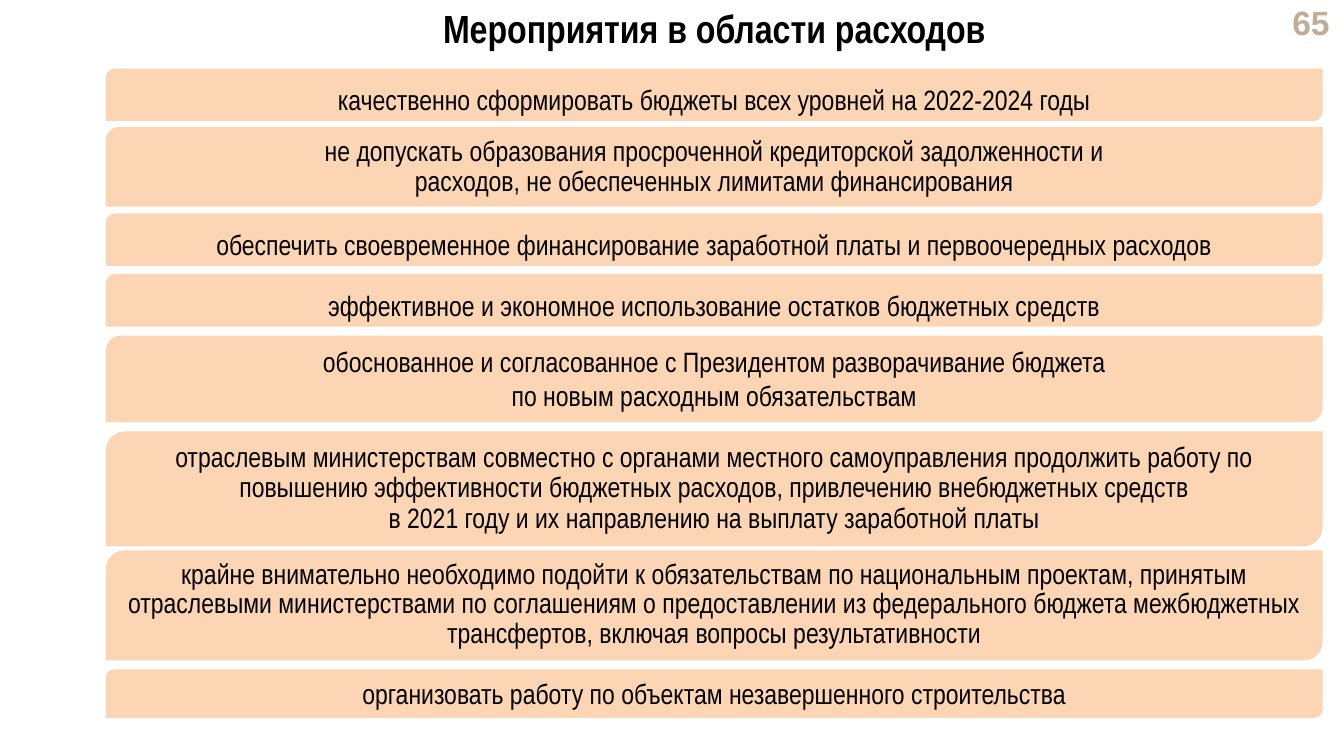
from pptx import Presentation
from pptx.dml.color import RGBColor as RGB
from pptx.enum.shapes import MSO_SHAPE as Shape
from pptx.enum.text import MSO_ANCHOR as Anchor, MSO_AUTO_SIZE as AutoSize, PP_ALIGN as Align
from pptx.util import Cm, Pt

TITLE = "Мероприятия в области расходов"
PAGE = "65"
MEASURES = [
    (1.73, 1.32, 1.2, "качественно сформировать бюджеты всех уровней на 2022-2024 годы"),
    (3.2, 2.01, Pt(22), "не допускать образования просроченной кредиторской задолженности и\v"
                        "расходов, не обеспеченных лимитами финансирования"),
    (5.38, 1.32, 1.2, "обеспечить своевременное финансирование заработной платы и первоочередных расходов"),
    (6.91, 1.32, 1.2, "эффективное и экономное использование остатков бюджетных средств"),
    (8.46, 2.18, None, "обоснованное и согласованное с Президентом разворачивание бюджета\v"
                       "по новым расходным обязательствам"),
    (10.87, 2.9, Pt(22), "отраслевым министерствам совместно с органами местного самоуправления "
                         "продолжить работу по повышению эффективности бюджетных расходов, "
                         "привлечению внебюджетных средств\v"
                         "в 2021 году и их направлению на выплату заработной платы"),
    (13.87, 2.77, Pt(21), "крайне внимательно необходимо подойти к обязательствам по национальным "
                          "проектам, принятым отраслевыми министерствами по соглашениям о "
                          "предоставлении из федерального бюджета межбюджетных трансфертов, "
                          "включая вопросы результативности"),
    (16.87, 1.22, None, "организовать работу по объектам незавершенного строительства"),
]
THEME = {
    "text": RGB(0, 0, 0), "page": RGB(0xBF, 0xAE, 0x96), "bar": RGB(0xFC, 0xD5, 0xB5),
    "font": "Arial Narrow", "page_font": "Arial",
    "title_size": Pt(28), "page_size": Pt(24), "body_size": Pt(20),
}
LEFT, WIDTH = Cm(2.67), Cm(30.66)


def write(sp, text, size, align=Align.CENTER, font="font", color="text", bold=False,
          spacing=None, anchor=Anchor.TOP):
    tf = sp.text_frame
    tf.word_wrap = True
    tf.vertical_anchor = anchor
    p = tf.paragraphs[0]
    p.text = text
    p.alignment = align
    if spacing:
        p.line_spacing = spacing
    p.font.name = THEME[font]
    p.font.size = THEME[size]
    p.font.bold = bold
    p.font.color.rgb = THEME[color]
    return tf


def add_bar(s, top, height, spacing, text):
    sp = s.shapes.add_shape(Shape.ROUND_2_DIAG_RECTANGLE, LEFT, Cm(top), WIDTH, Cm(height))
    sp.shadow.inherit = False
    sp.fill.solid()
    sp.fill.fore_color.rgb = THEME["bar"]
    sp.line.fill.background()
    tf = write(sp, text, "body_size", spacing=spacing)
    tf.auto_size = AutoSize.SHAPE_TO_FIT_TEXT
    tf.paragraphs[0].space_after = Pt(6)


def main():
    prs = Presentation()
    prs.slide_width, prs.slide_height = Cm(33.87), Cm(19.05)
    s = prs.slides.add_slide(prs.slide_layouts[6])
    page = s.shapes.add_textbox(Cm(31.6), Cm(0.13), Cm(2.16), Cm(0.86))
    write(page, PAGE, "page_size", Align.RIGHT, "page_font", "page", True, anchor=Anchor.MIDDLE)
    title = s.shapes.add_textbox(LEFT, Cm(0.13), WIDTH, Cm(1.6))
    write(title, TITLE, "title_size", bold=True, spacing=0.9)
    for measure in MEASURES:
        add_bar(s, *measure)
    prs.save("out.pptx")


if __name__ == "__main__":
    main()
